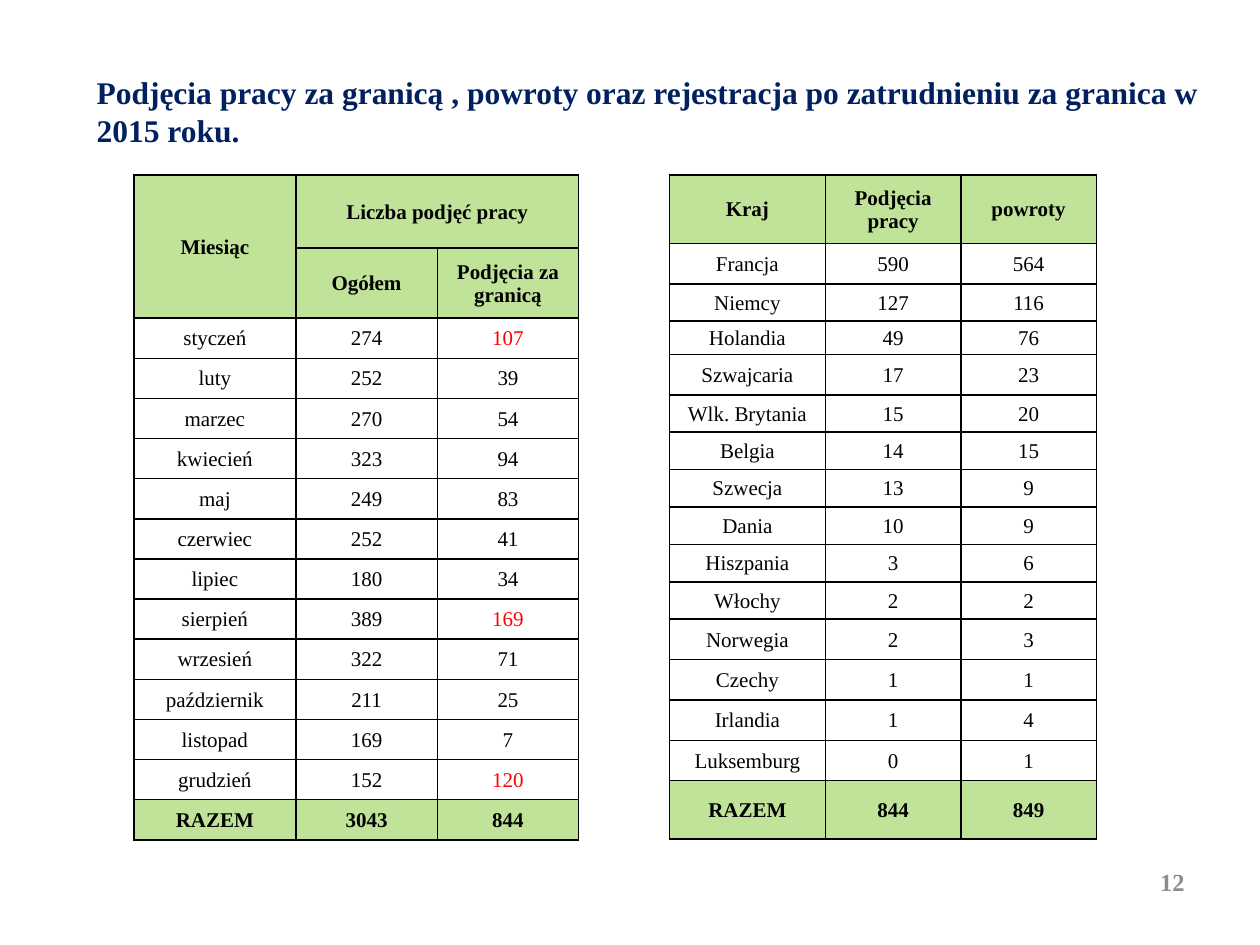
from lxml import etree
from pptx import Presentation
from pptx.dml.color import RGBColor
from pptx.enum.text import MSO_ANCHOR, MSO_AUTO_SIZE, PP_ALIGN
from pptx.oxml.ns import qn
from pptx.util import Pt

MIDDLE, TOP = MSO_ANCHOR.MIDDLE, MSO_ANCHOR.TOP
LEFT, CENTER, RIGHT = PP_ALIGN.LEFT, PP_ALIGN.CENTER, PP_ALIGN.RIGHT
NO_AUTO_SIZE = MSO_AUTO_SIZE.NONE

BLACK = RGBColor(0x00, 0x00, 0x00)
RED = RGBColor(0xFF, 0x00, 0x00)
NAVY = RGBColor(0x00, 0x20, 0x60)
GRAY = RGBColor(0x8C, 0x8C, 0x8C)
GREEN = RGBColor(0xC0, 0xE3, 0x99)

FONT = "Times New Roman"
BORDER_SIDES = ("a:lnL", "a:lnR", "a:lnT", "a:lnB")
CELL_FORMAT = {
    "margin_left": Pt(0.7),
    "margin_right": Pt(0.7),
    "margin_top": Pt(0.7),
    "margin_bottom": Pt(0),
    "vertical_anchor": MIDDLE,
}

TITLE = "Podjęcia pracy za granicą , powroty oraz rejestracja po zatrudnieniu za granica w 2015 roku."
MONTH_HEADERS = [
    ("Miesiąc", "Liczba podjęć pracy", ""),
    ("", "Ogółem", "Podjęcia za granicą"),
]
MONTHS = [
    ("styczeń", 274, 107),
    ("luty", 252, 39),
    ("marzec", 270, 54),
    ("kwiecień", 323, 94),
    ("maj", 249, 83),
    ("czerwiec", 252, 41),
    ("lipiec", 180, 34),
    ("sierpień", 389, 169),
    ("wrzesień", 322, 71),
    ("październik", 211, 25),
    ("listopad", 169, 7),
    ("grudzień", 152, 120),
    ("RAZEM", 3043, 844),
]
COUNTRY_HEADERS = [("Kraj", "Podjęcia pracy", "powroty")]
COUNTRIES = [
    ("Francja", 590, 564),
    ("Niemcy", 127, 116),
    ("Holandia", 49, 76),
    ("Szwajcaria", 17, 23),
    ("Wlk. Brytania", 15, 20),
    ("Belgia", 14, 15),
    ("Szwecja", 13, 9),
    ("Dania", 10, 9),
    ("Hiszpania", 3, 6),
    ("Włochy", 2, 2),
    ("Norwegia", 2, 3),
    ("Czechy", 1, 1),
    ("Irlandia", 1, 4),
    ("Luksemburg", 0, 1),
    ("RAZEM", 844, 849),
]
MONTH_HEIGHTS = [41.8, 40] + [22.95] * 13
COUNTRY_HEIGHTS = [39.2, 23.1, 21.1, 19.2, 23.1] + [21.4] * 6 + [23.1] * 4 + [33.2]
PEAKS = {(2, 2), (9, 2), (13, 2)}


def write_text(text_frame, text, size, color, bold, alignment):
    """Fill a text frame with one formatted paragraph."""
    paragraph = text_frame.paragraphs[0]
    paragraph.alignment = alignment
    run = paragraph.add_run()
    run.text = text
    run.font.color.rgb = color
    for name, value in {"name": FONT, "size": Pt(size), "bold": bold}.items():
        setattr(run.font, name, value)


def set_borders(cell):
    """Give a cell a thin black line on every side."""
    properties = cell._tc.get_or_add_tcPr()
    for side in BORDER_SIDES:
        line = etree.SubElement(properties, qn(side), w=str(Pt(1)))
        fill = etree.SubElement(line, qn("a:solidFill"))
        etree.SubElement(fill, qn("a:srgbClr"), val=str(BLACK))


def format_cell(cell, text, emphasized, color):
    """Write and style one table cell."""
    for name, value in CELL_FORMAT.items():
        setattr(cell, name, value)
    set_borders(cell)
    if emphasized:
        cell.fill.solid()
        cell.fill.fore_color.rgb = GREEN
    else:
        cell.fill.background()
    write_text(cell.text_frame, str(text), 12, color, emphasized, CENTER)


def add_data_table(slide, left, top, headers, records, widths, heights, peaks=()):
    """Place a table with green header rows and a green total row."""
    rows = headers + records
    shape = slide.shapes.add_table(
        len(rows), len(widths), Pt(left), Pt(top), Pt(sum(widths)), Pt(sum(heights))
    )
    table = shape.table
    table.first_row = table.horz_banding = False
    for column, width in zip(table.columns, widths):
        column.width = Pt(width)
    for row, height in zip(table.rows, heights):
        row.height = Pt(height)
    for i, values in enumerate(rows):
        emphasized = i < len(headers) or i == len(rows) - 1
        for j, value in enumerate(values):
            color = RED if (i, j) in peaks else BLACK
            format_cell(table.cell(i, j), value, emphasized, color)
    return table


def place_text(shape, box, text, size, color, alignment, anchor):
    """Move a text shape into its box and write bold text in it."""
    for name, value in zip(("left", "top", "width", "height"), box):
        setattr(shape, name, Pt(value))
    frame = shape.text_frame
    settings = {"word_wrap": True, "auto_size": NO_AUTO_SIZE, "vertical_anchor": anchor}
    for name, value in settings.items():
        setattr(frame, name, value)
    write_text(frame, text, size, color, True, alignment)


def build_slide(presentation):
    """Add the slide with its title, two tables and page number."""
    slide = presentation.slides.add_slide(presentation.slide_layouts[5])
    place_text(slide.shapes.title, (48, 38, 646, 51), TITLE, 18, NAVY, LEFT, MIDDLE)
    months = add_data_table(
        slide, 76.5, 100, MONTH_HEADERS, MONTHS, (92.6, 80.8, 80.8), MONTH_HEIGHTS, PEAKS
    )
    months.cell(0, 0).merge(months.cell(1, 0))
    months.cell(0, 1).merge(months.cell(0, 2))
    add_data_table(
        slide, 382.5, 100, COUNTRY_HEADERS, COUNTRIES, (89.2, 77.4, 77.4), COUNTRY_HEIGHTS
    )
    page_number = slide.shapes.add_textbox(0, 0, 0, 0)
    place_text(page_number, (516, 492, 168, 37.5), "12", 14, GRAY, RIGHT, TOP)


def main():
    """Create and save the presentation."""
    presentation = Presentation()
    presentation.slide_width, presentation.slide_height = Pt(720), Pt(540)
    build_slide(presentation)
    presentation.save("out.pptx")


if __name__ == "__main__":
    main()
